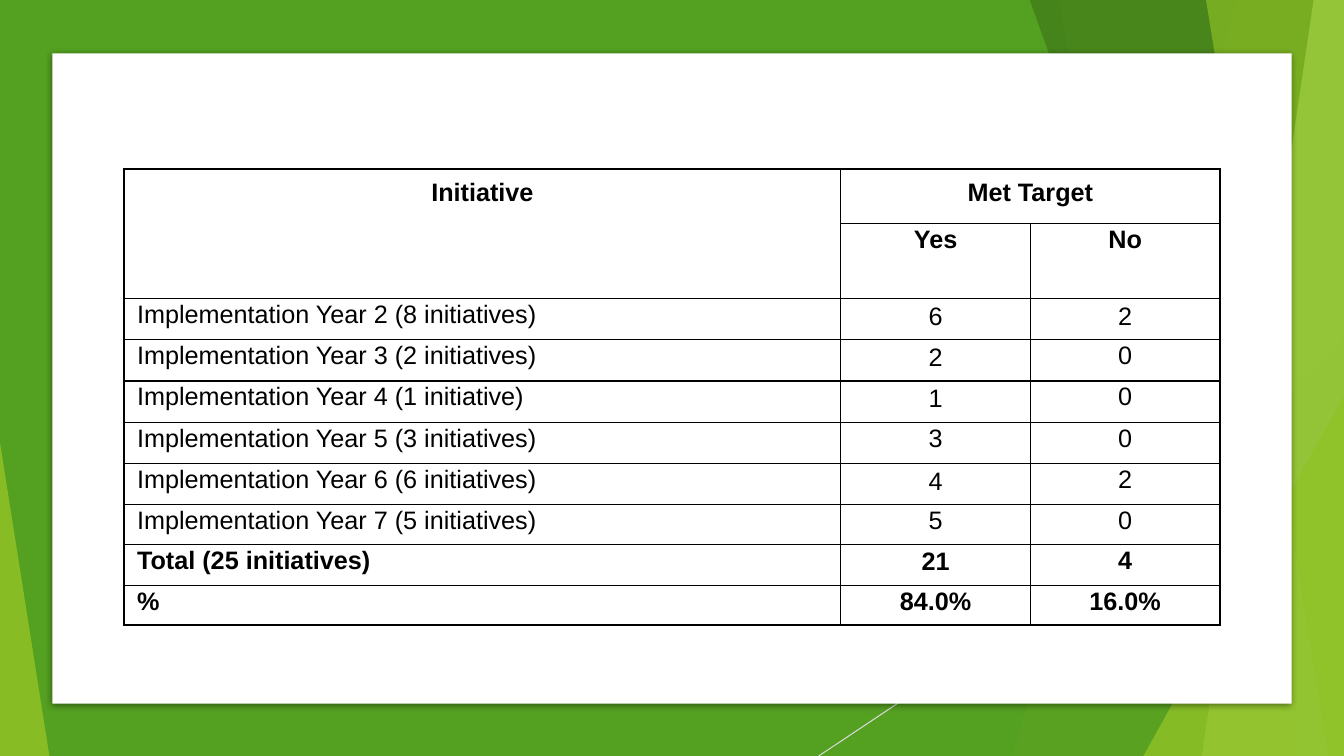
from lxml.etree import SubElement
from pptx import Presentation
from pptx.dml.color import RGBColor
from pptx.enum.shapes import MSO_CONNECTOR, MSO_SHAPE
from pptx.enum.text import PP_ALIGN
from pptx.oxml.ns import qn
from pptx.util import Inches, Pt

# Content
INITIATIVES = [
    ("Implementation Year 2 (8 initiatives)", "6", "2"),
    ("Implementation Year 3 (2 initiatives)", "2", "0"),
    ("Implementation Year 4 (1 initiative)", "1", "0"),
    ("Implementation Year 5 (3 initiatives)", "3", "0"),
    ("Implementation Year 6 (6 initiatives)", "4", "2"),
    ("Implementation Year 7 (5 initiatives)", "5", "0"),
    ("Total (25 initiatives)", "21", "4"),
    ("%", "84.0%", "16.0%"),
]
ROWS = [("Initiative", "Met Target", ""), ("", "Yes", "No")] + INITIATIVES
BOLD_ROWS = {0, 1, 8, 9}
LOOSE_CELLS = {(2, 1), (3, 1), (4, 1), (6, 1), (8, 1), (2, 2)}
COL_WIDTHS = [7.11, 1.88, 1.88]
ROW_HEIGHTS = [0.54, 0.74] + [0.41] * 5 + [0.39, 0.41, 0.39]

# Facets from back to front: bands by top x and bottom x of the slanted edge,
# triangles by box and apex position
WIDTH, HEIGHT, BAND_TOP = 13.33, 7.5, -0.01
FACETS = [
    ("band", (12.28, 10.04), "90C226", 30),
    ("band", (10.5, 11.83), "90C226", 20),
    ("triangle", (9.77, 3.33, 3.56, 4.17, 1), "54A021", 72),
    ("band", (10.21, 12.91), "3F7819", 70),
    ("band", (13.03, 11.92), "C0E474", 70),
    ("band", (11.96, 13.18), "90C226", 65),
    ("triangle", (11.34, 3.93, 1.99, 3.57, 1), "90C226", 80),
    ("triangle", (0, 4.39, 0.49, 3.11, 0), "90C226", 85),
]

prs = Presentation()
prs.slide_width, prs.slide_height = Inches(WIDTH), Inches(HEIGHT)
s = prs.slides.add_slide(prs.slide_layouts[6])


def rgb(value):
    return RGBColor.from_string(value)


def paint(sp, color, opacity=100):
    sp.shadow.inherit = False
    sp.line.fill.background()
    sp.fill.solid()
    sp.fill.fore_color.rgb = rgb(color)
    if opacity < 100:
        clr = sp.fill._xPr.find(qn("a:solidFill"))[0]
        SubElement(clr, qn("a:alpha"), val=str(opacity * 1000))


def add_box(kind, left, top, width, height):
    return s.shapes.add_shape(kind, Inches(left), Inches(top), Inches(width), Inches(height))


def add_band(top_x, bottom_x):
    builder = s.shapes.build_freeform(Inches(top_x), Inches(BAND_TOP))
    corners = [(WIDTH, BAND_TOP), (WIDTH, HEIGHT), (bottom_x, HEIGHT)]
    builder.add_line_segments([(Inches(x), Inches(y)) for x, y in corners])
    return builder.convert_to_shape()


def add_triangle(left, top, width, height, apex):
    sp = add_box(MSO_SHAPE.ISOSCELES_TRIANGLE, left, top, width, height)
    sp.adjustments[0] = apex
    return sp


def write(tf, text, size=18, bold=False, align=PP_ALIGN.CENTER, spacing=None):
    p = tf.paragraphs[0]
    p.alignment, p.line_spacing = align, spacing
    r = p.add_run()
    r.text = text
    r.font.name, r.font.size, r.font.bold = "Arial", Pt(size), bold
    r.font.color.rgb = rgb("000000")


def add_borders(cell, **widths):
    tc_pr = cell._tc.get_or_add_tcPr()
    for side, width in widths.items():
        ln = SubElement(tc_pr, qn(f"a:ln{side}"), w=str(Pt(width)))
        SubElement(SubElement(ln, qn("a:solidFill")), qn("a:srgbClr"), val="000000")


# Green background, thin line and facets
paint(add_box(MSO_SHAPE.RECTANGLE, 0, 0, WIDTH, HEIGHT), "54A021")
line = s.shapes.add_connector(
    MSO_CONNECTOR.STRAIGHT, Inches(WIDTH), Inches(4.03), Inches(8.12), Inches(HEIGHT))
line.line.color.rgb, line.line.width = rgb("D9D9D9"), Pt(0.75)
SubElement(line._element.spPr, qn("a:effectLst"))
for kind, geometry, color, opacity in FACETS:
    add_facet = add_band if kind == "band" else add_triangle
    paint(add_facet(*geometry), color, opacity)

# White card with a soft shadow
card = add_box(MSO_SHAPE.RECTANGLE, 0.52, 0.53, 12.29, 6.45)
paint(card, "FFFFFF")
shadow = SubElement(card._element.spPr.find(qn("a:effectLst")), qn("a:outerShdw"),
                    blurRad=str(Pt(5)), dist=str(Pt(1.4)), dir="5400000",
                    algn="ctr", rotWithShape="0")
shadow_color = SubElement(shadow, qn("a:srgbClr"), val="000000")
SubElement(shadow_color, qn("a:alpha"), val="43000")

# Table
table = s.shapes.add_table(
    len(ROWS), len(COL_WIDTHS), Inches(1.23), Inches(1.68),
    Inches(sum(COL_WIDTHS)), Inches(sum(ROW_HEIGHTS))).table
table.first_row = table.horz_banding = False
for col, width in zip(table.columns, COL_WIDTHS):
    col.width = Inches(width)
for row, height in zip(table.rows, ROW_HEIGHTS):
    row.height = Inches(height)
table.cell(0, 0).merge(table.cell(1, 0))
table.cell(0, 1).merge(table.cell(0, 2))

last_row, last_col = len(ROWS) - 1, len(COL_WIDTHS) - 1
for i, texts in enumerate(ROWS):
    for j, text in enumerate(texts):
        cell = table.cell(i, j)
        right = j + cell.span_width - 1 if cell.is_merge_origin else j
        add_borders(cell, L=1.5 if j == 0 else 1, R=1.5 if right == last_col else 1,
                    T=1.5 if i == 0 else 1, B=1.5 if i == last_row else 1)
        cell.fill.background()
        side, top, bottom = (0.18, 0.09, 0.09) if i == 0 else (0.13, 0.02, 0)
        cell.margin_left = cell.margin_right = Inches(side)
        cell.margin_top, cell.margin_bottom = Inches(top), Inches(bottom)
        if text:
            write(cell.text_frame, text, bold=i in BOLD_ROWS,
                  align=PP_ALIGN.LEFT if j == 0 and i > 1 else PP_ALIGN.CENTER,
                  spacing=1.07 if (i, j) in LOOSE_CELLS else None)

prs.save("out.pptx")
